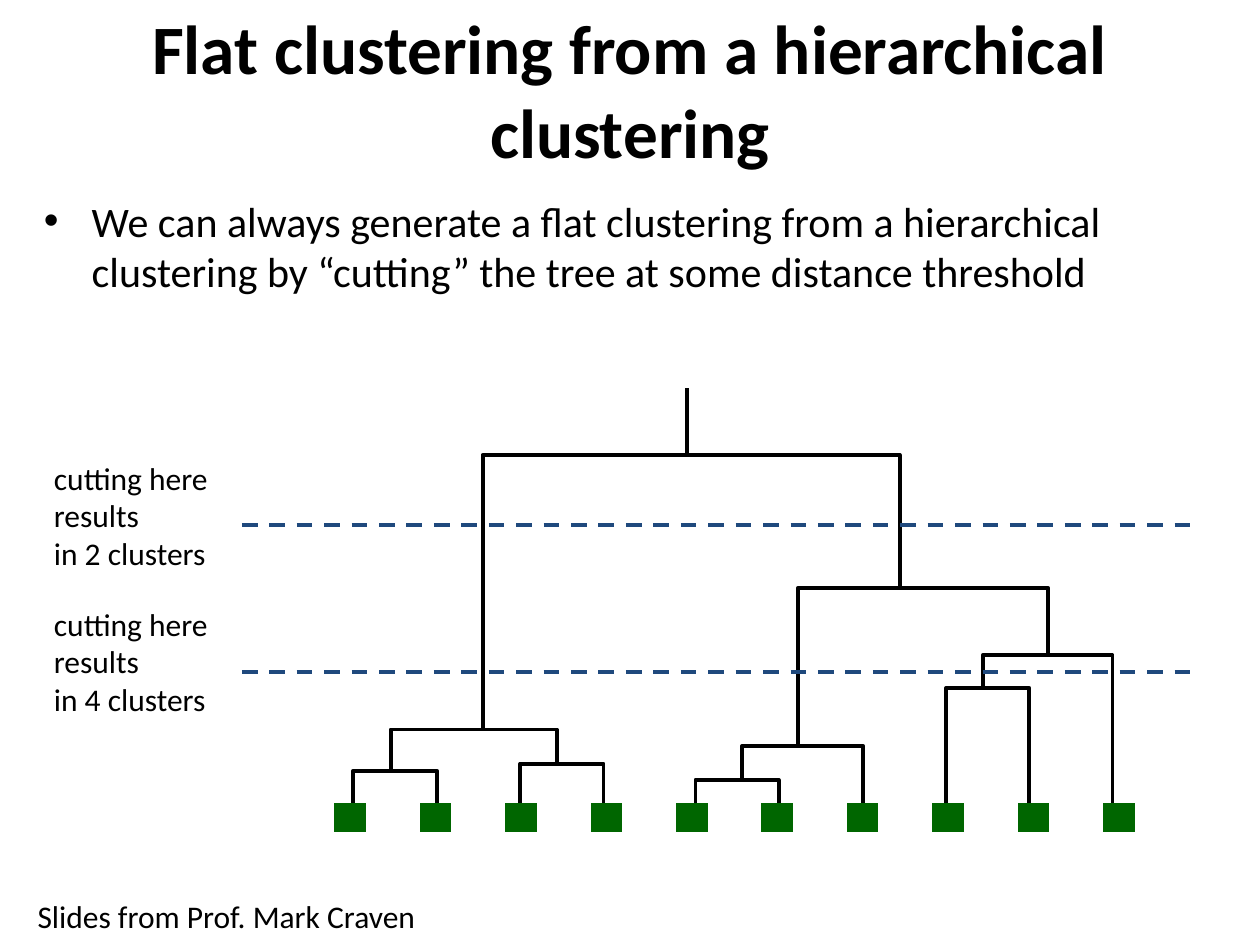
from lxml import etree
from pptx import Presentation
from pptx.dml.color import RGBColor
from pptx.enum.dml import MSO_LINE
from pptx.enum.shapes import MSO_CONNECTOR, MSO_SHAPE
from pptx.enum.text import MSO_ANCHOR, MSO_AUTO_SIZE, PP_ALIGN
from pptx.oxml.ns import qn
from pptx.util import Inches, Pt

DASH = MSO_LINE.DASH
STRAIGHT = MSO_CONNECTOR.STRAIGHT
RECTANGLE = MSO_SHAPE.RECTANGLE
MIDDLE, TOP = MSO_ANCHOR.MIDDLE, MSO_ANCHOR.TOP
NO_FIT = MSO_AUTO_SIZE.NONE
LEFT, CENTER = PP_ALIGN.LEFT, PP_ALIGN.CENTER

COLORS = {"ink": "000000", "leaf": "006600", "cut": "1F497D"}
FONT = "Calibri"
LINE_WIDTH = 2.25

# Leaf row: evenly spaced squares from the first left edge to the last
LEAF_COUNT = 10
LEAF_FIRST, LEAF_LAST, LEAF_TOP = 2.67, 8.77, 6.39
LEAF_STEP = (LEAF_LAST - LEAF_FIRST) / (LEAF_COUNT - 1)
LEAF_WIDTH, LEAF_HEIGHT = 0.22, 0.2
LEAF_BASE = 6.45

# Merge name: (left x, right x, bar y, left child, right child); None is a leaf
MERGES = {
    "a": (2.8, 3.47, 6.12, None, None),
    "b": (4.13, 4.79, 6.06, None, None),
    "ab": (3.1, 4.42, 5.79, "a", "b"),
    "c": (5.52, 6.18, 6.19, None, None),
    "cd": (5.89, 6.85, 5.92, "c", None),
    "e": (7.51, 8.17, 5.46, None, None),
    "ef": (7.8, 8.83, 5.2, "e", None),
    "cdef": (6.33, 8.32, 4.67, "cd", "ef"),
    "root": (3.83, 7.14, 3.61, "ab", "cdef"),
}
STEM_X, STEM_TOP = 5.45, 3.08

# Cut line y and the number of clusters it gives
CUTS = [(4.17, 2), (5.33, 4)]
CUT_LEFT, CUT_RIGHT = 1.92, 9.5


def rgb(name):
    return RGBColor.from_string(COLORS[name])


def style_line(line, color):
    line.color.rgb = rgb(color)
    line.width = Pt(LINE_WIDTH)


def write_text(frame, text, size=18, bold=False, align=LEFT, anchor=TOP, bullet=False):
    frame.word_wrap = True
    frame.auto_size = NO_FIT
    frame.vertical_anchor = anchor
    for number, line in enumerate(text.split("\n")):
        para = frame.add_paragraph() if number else frame.paragraphs[0]
        para.alignment = align
        if bullet:
            props = para._p.get_or_add_pPr()
            props.set("marL", str(Inches(0.38)))
            props.set("indent", str(Inches(-0.38)))
            etree.SubElement(props, qn("a:buFont")).set("typeface", "Arial")
            etree.SubElement(props, qn("a:buChar")).set("char", "•")
        span = para.add_run()
        span.text = line
        span.font.name = FONT
        span.font.size = Pt(size)
        span.font.bold = bold
        span.font.color.rgb = rgb("ink")


def add_text(page, left, top, width, height, text, **style):
    box = page.shapes.add_textbox(*map(Inches, (left, top, width, height)))
    write_text(box.text_frame, text, **style)
    return box


def add_line(page, x1, y1, x2, y2, color):
    line = page.shapes.add_connector(STRAIGHT, *map(Inches, (x1, y1, x2, y2)))
    style_line(line.line, color)
    etree.SubElement(line._element.spPr, qn("a:effectLst"))
    return line


def add_merge(page, left, right, bar, left_child, right_child):
    left_base, right_base = (
        MERGES[child][2] if child else LEAF_BASE for child in (left_child, right_child)
    )
    corners = [(left, left_base), (left, bar), (right, bar), (right, right_base)]
    start, *rest = [(Inches(x), Inches(y)) for x, y in corners]
    outline = page.shapes.build_freeform(*start)
    outline.add_line_segments(rest, close=False)
    bracket = outline.convert_to_shape()
    bracket.shadow.inherit = False
    bracket.fill.background()
    style_line(bracket.line, "ink")


def add_leaf(page, column):
    left = LEAF_FIRST + column * LEAF_STEP
    leaf = page.shapes.add_shape(
        RECTANGLE, *map(Inches, (left, LEAF_TOP, LEAF_WIDTH, LEAF_HEIGHT))
    )
    leaf.shadow.inherit = False
    leaf.fill.solid()
    leaf.fill.fore_color.rgb = rgb("leaf")
    style_line(leaf.line, "leaf")
    # Sharp corners
    etree.SubElement(leaf._element.spPr.find(qn("a:ln")), qn("a:miter")).set("lim", "800000")


def add_cut(page, y, clusters):
    add_line(page, CUT_LEFT, y, CUT_RIGHT, y, "cut").line.dash_style = DASH
    label = add_text(page, 0.33, y - 0.58, 2.1, 0.7,
                     f"cutting here results\nin {clusters} clusters")
    label.text_frame.margin_right = Inches(0.3)


def main():
    deck = Presentation()
    deck.slide_width, deck.slide_height = Inches(10), Inches(7.5)
    page = deck.slides.add_slide(deck.slide_layouts[5])

    # Title
    title = page.shapes.title
    title.left, title.top, title.width, title.height = map(Inches, (0, 0.08, 10, 1.25))
    write_text(title.text_frame, "Flat clustering from a hierarchical clustering",
               size=39.6, bold=True, align=CENTER, anchor=MIDDLE)

    # Tree
    for merge in MERGES.values():
        add_merge(page, *merge)
    for column in range(LEAF_COUNT):
        add_leaf(page, column)
    add_line(page, STEM_X, MERGES["root"][2], STEM_X, STEM_TOP, "ink")

    # Cut lines with labels
    for y, clusters in CUTS:
        add_cut(page, y, clusters)

    # Statement and credit
    add_text(page, 0.25, 1.5, 9.33, 0.92,
             "We can always generate a flat clustering from a hierarchical clustering "
             "by “cutting” the tree at some distance threshold",
             size=24, bullet=True)
    add_text(page, 0.2, 7.07, 3.27, 0.4, "Slides from Prof. Mark Craven")

    deck.save("out.pptx")


if __name__ == "__main__":
    main()
